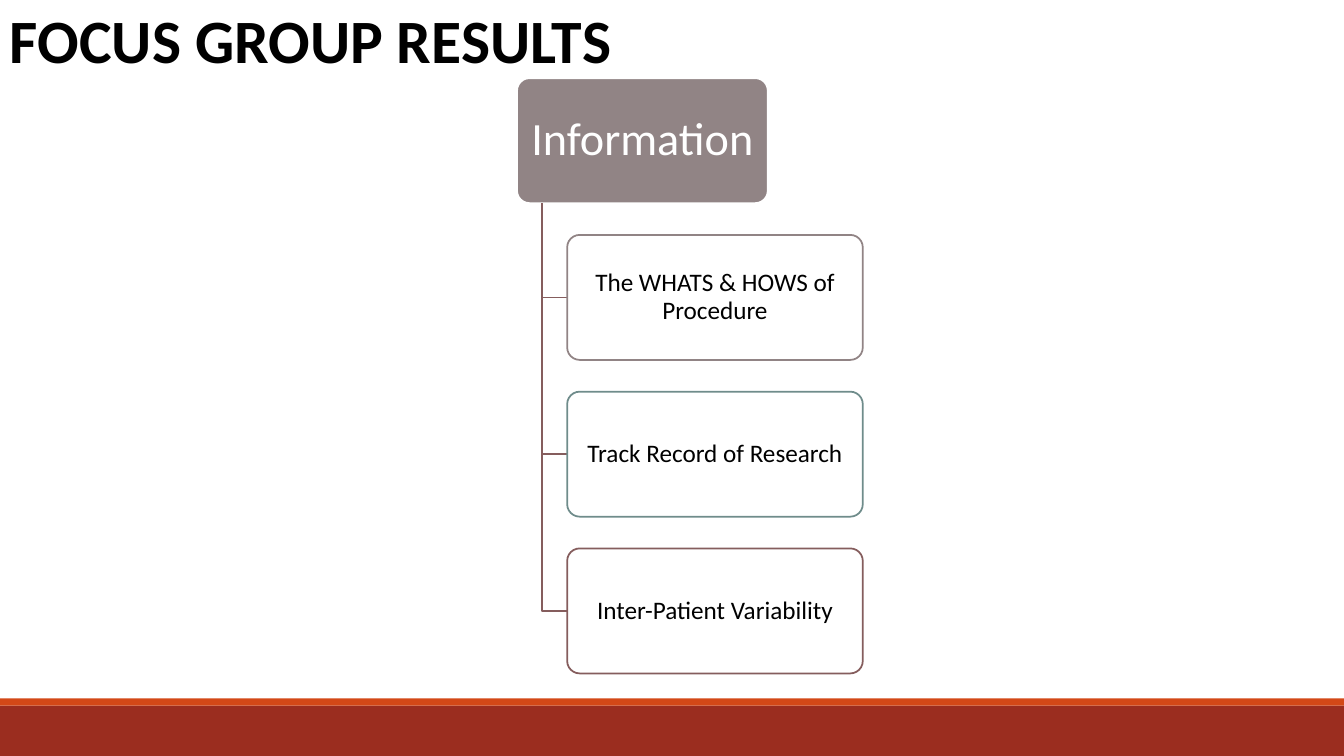
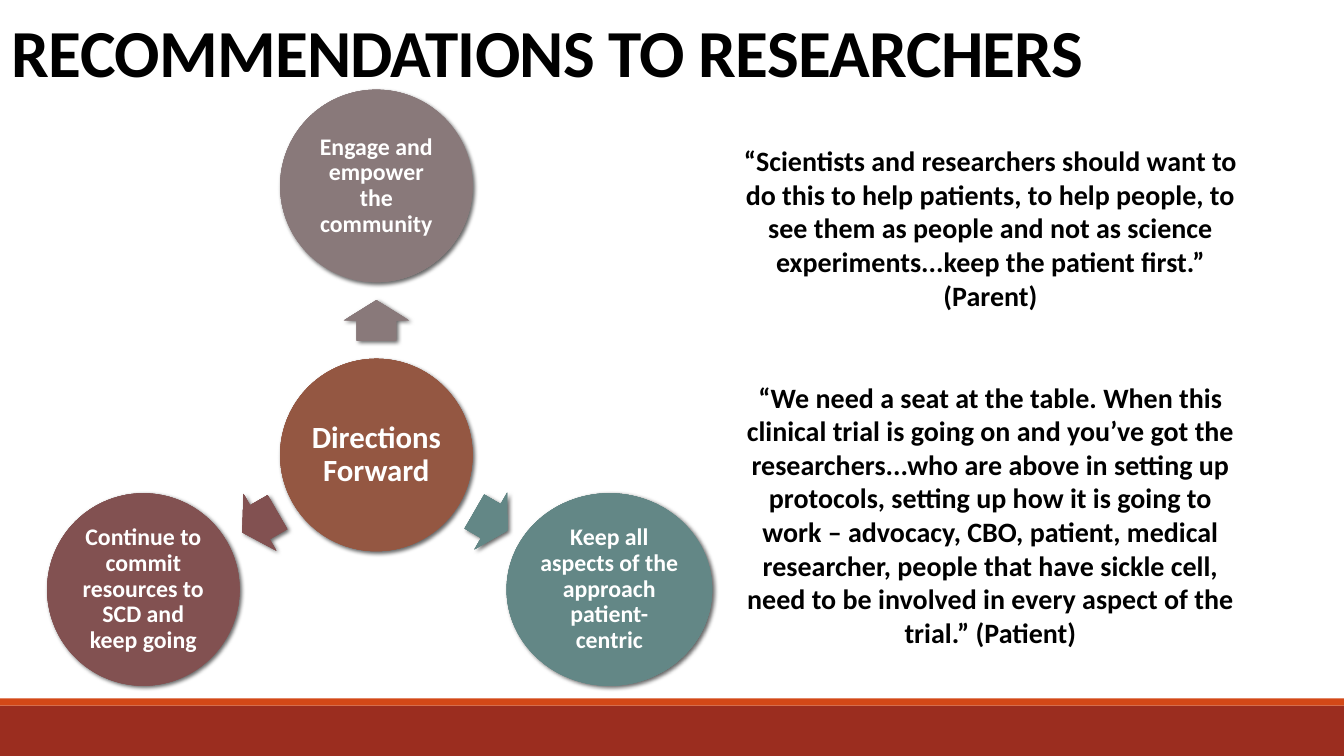
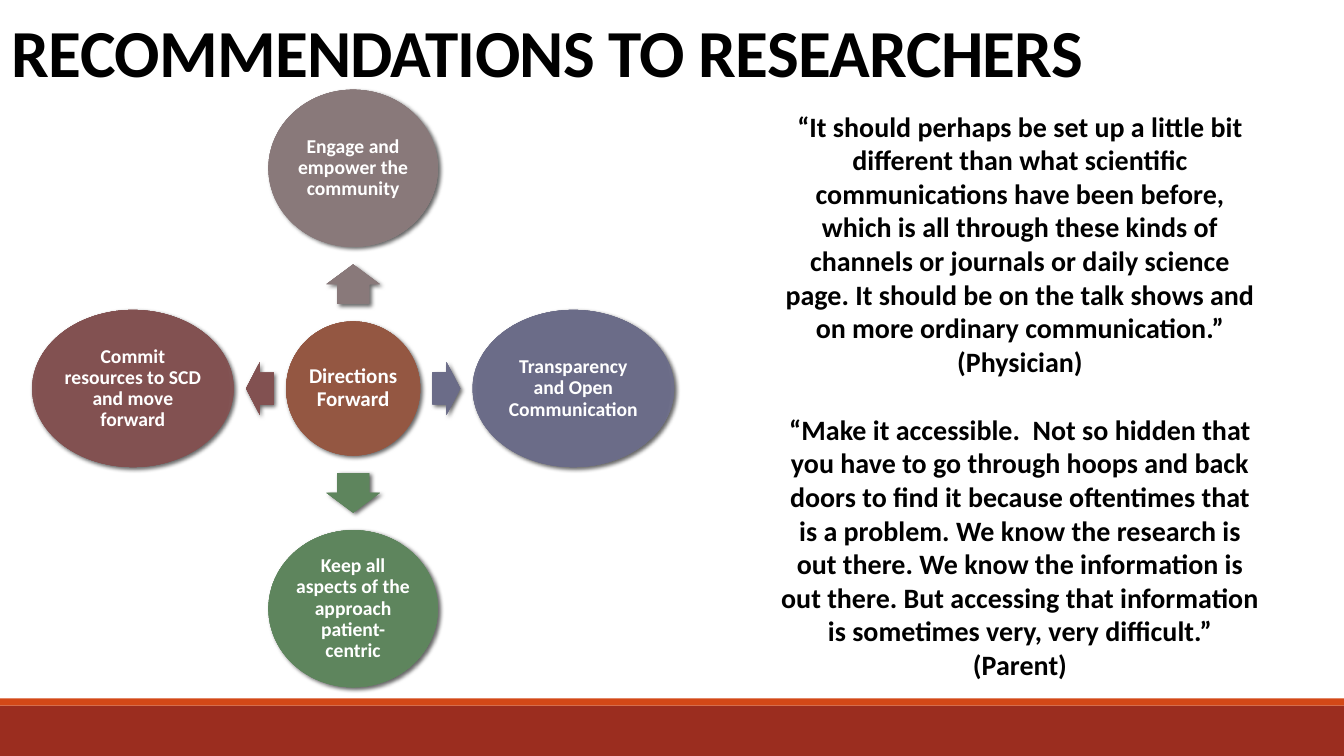
from math import cos, hypot, radians, sin

from lxml.etree import SubElement
from pptx import Presentation
from pptx.dml.color import RGBColor
from pptx.enum.shapes import MSO_SHAPE
from pptx.enum.text import MSO_ANCHOR, MSO_AUTO_SIZE, PP_ALIGN
from pptx.oxml.ns import qn
from pptx.util import Cm, Pt

WIDE, HIGH = 33.87, 19.05
FONT = "Calibri"
INK = {
    "brick": "9B2D1F", "flame": "D34817", "black": "000000", "white": "FFFFFF",
    "taupe": "918485", "sage": "6F8C8B", "wine": "855D5D",
    "rust": "945742", "rust rim": "98604E",
    "plum": "89797A", "plum rim": "928384",
    "teal": "638786", "teal rim": "6E8E8D",
    "rose": "825151", "rose rim": "875B5B",
    "slate": "6B6C88", "slate rim": "75768F",
    "fern": "5E855D", "fern rim": "688C67",
}


def tint(name):
    return RGBColor.from_string(INK[name])


def place(shape, box):
    shape.left, shape.top, shape.width, shape.height = (Cm(v) for v in box)


def write(shape, *lines, size=18, color="black", bold=False, align=PP_ALIGN.CENTER,
          anchor=MSO_ANCHOR.MIDDLE, inset=(0.25, 0.13), leading=0.9, gap=0, track=0):
    frame = shape.text_frame
    frame.word_wrap = True
    frame.auto_size = MSO_AUTO_SIZE.NONE
    frame.vertical_anchor = anchor
    frame.margin_left = frame.margin_right = Cm(inset[0])
    frame.margin_top = frame.margin_bottom = Cm(inset[1])
    for i, line in enumerate(lines):
        para = frame.paragraphs[0] if i == 0 else frame.add_paragraph()
        props = para._p.get_or_add_pPr()
        props.set("marL", "0")
        props.set("indent", "0")
        SubElement(props, qn("a:buNone"))
        para.alignment = align
        para.line_spacing = leading
        para.space_before = Pt(gap if i else 0)
        run = para.add_run()
        run.text = line
        font = run.font
        font.name, font.size, font.bold = FONT, Pt(size), bold
        font.color.rgb = tint(color)
        if track:
            run._r.get_or_add_rPr().set("spc", str(track))


def draw(slide, kind, box, fill, line=None):
    shape = slide.shapes.add_shape(kind, *(Cm(v) for v in box))
    shape.shadow.inherit = False
    shape.fill.solid()
    shape.fill.fore_color.rgb = tint(fill)
    if line:
        shape.line.color.rgb = tint(line)
        shape.line.width = Pt(1.25)
    else:
        shape.line.fill.background()
    return shape


def glow(shape, color):
    props = shape._element.spPr
    flat = props.find(qn("a:solidFill"))
    grad = flat.makeelement(qn("a:gradFill"), {"rotWithShape": "1"})
    props.replace(flat, grad)
    stops = SubElement(grad, qn("a:gsLst"))
    for pos, name in ((0, color), (70, color), (100, color + " rim")):
        stop = SubElement(stops, qn("a:gs"), pos=str(pos * 1000))
        SubElement(stop, qn("a:srgbClr"), val=INK[name])
    course = SubElement(grad, qn("a:path"), path="circle")
    SubElement(course, qn("a:fillToRect"), **dict.fromkeys("ltrb", "100000"))
    cast = SubElement(props.find(qn("a:effectLst")), qn("a:outerShdw"),
                      blurRad=str(Pt(3)), dist=str(Pt(2)), dir="2700000", rotWithShape="0")
    shade = SubElement(cast, qn("a:srgbClr"), val=INK["black"])
    SubElement(shade, qn("a:alpha"), val="60000")


def bands(deck, slide):
    tree = deck.slide_master.element.cSld.spTree
    for top, high, color in ((17.78, 1.27, "brick"), (17.6, 0.18, "flame")):
        band = draw(slide, MSO_SHAPE.RECTANGLE, (0, top, WIDE, high), color)
        tree.append(band._element)


def head(slide, text, box, **style):
    place(slide.shapes.title, box)
    write(slide.shapes.title, text, bold=True, align=PP_ALIGN.LEFT,
          anchor=MSO_ANCHOR.TOP, **style)


def quotes(slide, box, gap, *lines):
    body = slide.placeholders[1]
    place(body, box)
    write(body, *lines, size=20, bold=True, anchor=MSO_ANCHOR.TOP, leading=1, gap=gap)


def tree(slide, box, root, leaves):
    left, top, wide, high = box
    step = 3.95
    stem = left + wide / 10
    edge = left + wide / 5

    def card(spot, fill, line):
        shape = draw(slide, MSO_SHAPE.ROUNDED_RECTANGLE, spot, fill, line)
        shape.adjustments[0] = 0.1
        return shape

    write(card(box, "taupe", "white"), root, size=33, color="white", inset=(0.18, 0.13))
    for i, (text, color) in enumerate(leaves, 1):
        y = top + i * step
        mid = y + high / 2
        pen = slide.shapes.build_freeform(Cm(stem), Cm(top + high))
        pen.add_line_segments([(Cm(stem), Cm(mid)), (Cm(edge), Cm(mid))], close=False)
        elbow = pen.convert_to_shape()
        elbow.shadow.inherit = False
        elbow.fill.background()
        elbow.line.color.rgb = tint("wine")
        elbow.line.width = Pt(1.25)
        write(card((edge, y, 7.45, high), "white", color), text, inset=(0.1, 0.08))


def wheel(slide, box, ring, high, sizes, spokes):
    left, top, wide, tall = box
    midx, midy = left + wide / 2, top + tall / 2

    def piece(kind, x, y, w, h, color):
        shape = draw(slide, kind, (x - w / 2, y - h / 2, w, h), color)
        glow(shape, color)
        return shape

    def disc(text, x, y, w, h, color, size):
        shape = piece(MSO_SHAPE.OVAL, x, y, w, h, color)
        write(shape, text, size=size, color="white", bold=True, inset=(0.05, 0.05))

    disc("Directions Forward", midx, midy, wide, tall, "rust", sizes[0])
    for text, color, angle, width in spokes:
        dx, dy = cos(radians(angle)), sin(radians(angle))
        near = wide / 2
        far = ring - 1 / hypot(dx / (width / 2), dy / (high / 2))
        mid = (near + far) / 2
        arrow = piece(MSO_SHAPE.RIGHT_ARROW, midx + mid * dx, midy + mid * dy,
                      0.53 * (far - near), 0.34 * high, color)
        arrow.adjustments[0], arrow.adjustments[1] = 0.6, 0.5
        arrow.rotation = angle
        disc(text, midx + ring * dx, midy + ring * dy, width, high, color, sizes[1])


def results(deck):
    slide = deck.slides.add_slide(deck.slide_layouts[5])
    bands(deck, slide)
    tree(slide, (13.03, 1.97, 6.32, 3.15), "Information", (
        ("The WHATS & HOWS of Procedure", "taupe"),
        ("Track Record of Research", "sage"),
        ("Inter-Patient Variability", "wine"),
    ))
    head(slide, "FOCUS GROUP RESULTS", (0, 0.13, 29.21, 3.68), size=44)


def advice(deck, hub, words):
    slide = deck.slides.add_slide(deck.slide_layouts[1])
    head(slide, "RECOMMENDATIONS TO RESEARCHERS", (0.05, 0.43, 32.84, 4.04),
         size=48, leading=0.85, track=-50)
    wheel(slide, *hub)
    quotes(slide, *words)


def main():
    deck = Presentation()
    deck.slide_width, deck.slide_height = Cm(WIDE), Cm(HIGH)
    results(deck)
    advice(deck, ((7.06, 9.04, 4.85, 4.85), 6.78, 4.85, (22, 17), (
        ("Engage and empower the community", "plum", 270, 4.85),
        ("Keep all aspects of the approach patient-centric", "teal", 30, 5.18),
        ("Continue to commit resources to SCD and keep going", "rose", 150, 4.85),
    )), (
        (18.47, 3.49, 12.98, 13.07), 48.8,
        "“Scientists and researchers should want to do this to help patients, to help "
        "people, to see them as people and not as science experiments...keep the "
        "patient first.” (Parent)",
        "“We need a seat at the table. When this clinical trial is going on and you’ve "
        "got the researchers...who are above in setting up protocols, setting up how it "
        "is going to work – advocacy, CBO, patient, medical researcher, people that "
        "have sickle cell, need to be involved in every aspect of the trial.” (Patient)",
    ))
    advice(deck, ((7.21, 8.1, 3.38, 3.38), 5.55, 3.96, (15, 14), (
        ("Engage and empower the community", "plum", 270, 4.27),
        ("Transparency and Open Communication", "slate", 0, 5.08),
        ("Keep all aspects of the approach patient-centric", "fern", 90, 4.27),
        ("Commit resources to SCD and move forward", "rose", 180, 5.08),
    )), (
        (19.43, 2.62, 12.55, 14.78), 24.4,
        "“It should perhaps be set up a little bit different than what scientific "
        "communications have been before, which is all through these kinds of channels "
        "or journals or daily science page. It should be on the talk shows and on more "
        "ordinary communication.” (Physician)",
        "“Make it accessible.  Not so hidden that you have to go through hoops and back "
        "doors to find it because oftentimes that is a problem. We know the research is "
        "out there. We know the information is out there. But accessing that "
        "information is sometimes very, very difficult.” (Parent)",
    ))
    deck.save("out.pptx")


if __name__ == "__main__":
    main()
